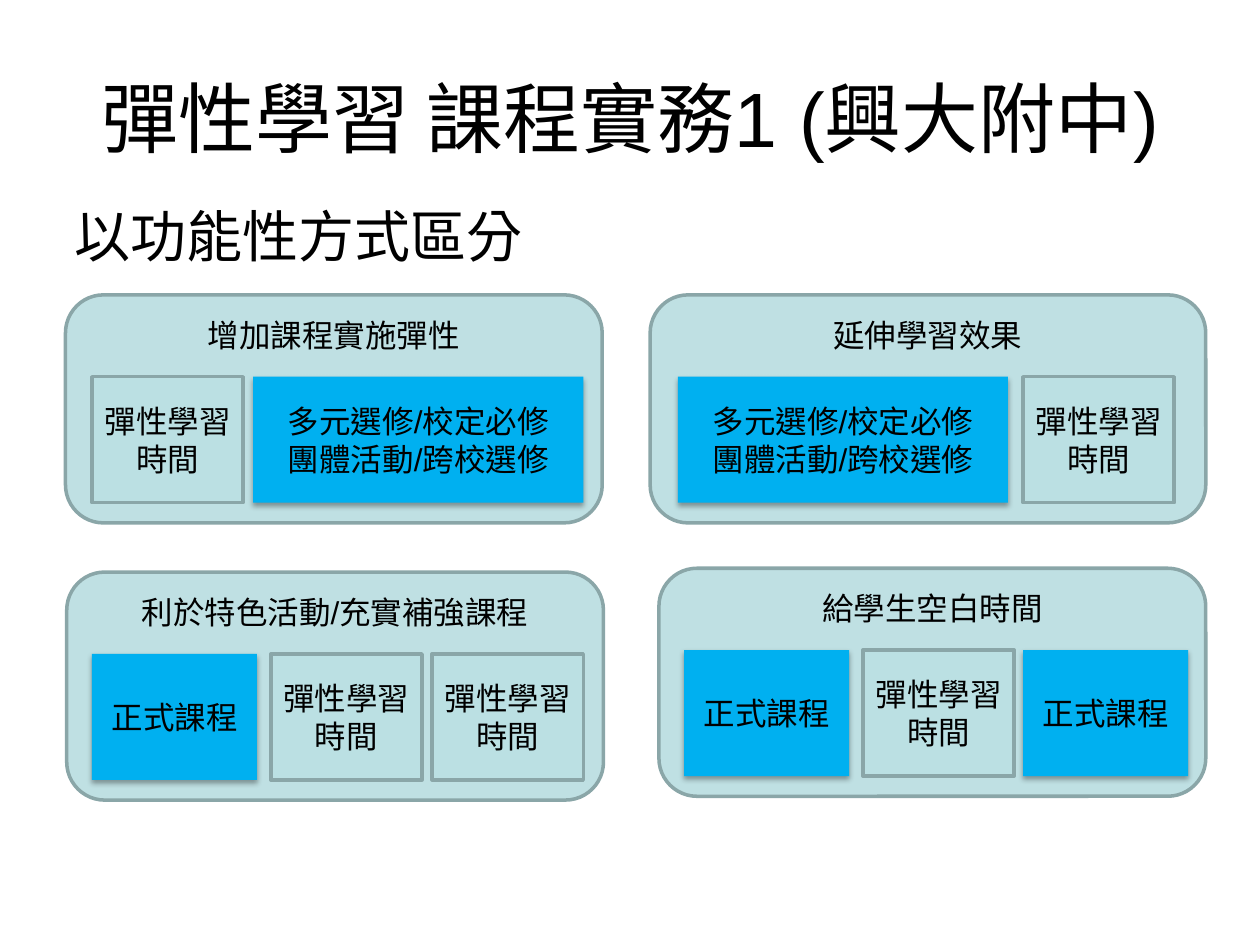
from dataclasses import dataclass

from lxml import etree
from pptx import Presentation
from pptx.dml.color import RGBColor
from pptx.enum import lang, shapes, text
from pptx.oxml import ns
from pptx.util import Inches, Pt

COLORS = {
    "text": "000000",
    "panel": "8AC6CD",
    "flexible": "BBE0E3",
    "course": "00B0F0",
    "border": "8AA6A8",
    "shadow": "000000",
}
FLEXIBLE = "彈性學習\n時間"
ELECTIVES = "多元選修/校定必修\n團體活動/跨校選修"
FORMAL = "正式課程"
PANEL_HEIGHT = 1.81
CARD_OFFSET = 0.65
CARD_HEIGHT = 1


@dataclass
class Card:
    label: str
    left: float
    width: float = 1.2

    @property
    def is_course(self) -> bool:
        return self.label != FLEXIBLE


@dataclass
class Panel:
    heading: str
    left: float
    top: float
    width: float
    cards: list[Card]


PANELS = [
    Panel("增加課程實施彈性", 0.52, 2.34, 4.26,
          [Card(FLEXIBLE, 0.73), Card(ELECTIVES, 2.01, 2.62)]),
    Panel("延伸學習效果", 5.16, 2.34, 4.41,
          [Card(ELECTIVES, 5.38, 2.62), Card(FLEXIBLE, 8.12)]),
    Panel("利於特色活動/充實補強課程", 0.53, 4.54, 4.26,
          [Card(FORMAL, 0.73, 1.31), Card(FLEXIBLE, 2.15), Card(FLEXIBLE, 3.43)]),
    Panel("給學生空白時間", 5.23, 4.51, 4.34,
          [Card(FORMAL, 5.43, 1.31), Card(FLEXIBLE, 6.85), Card(FORMAL, 8.12, 1.31)]),
]


def rgb(name: str) -> RGBColor:
    return RGBColor.from_string(COLORS[name])


def write(shape, content: str, *, size=18, align=text.PP_ALIGN.CENTER,
          anchor=text.MSO_ANCHOR.MIDDLE, side=0.1, top=0.05) -> None:
    """Fill a shape with one paragraph for each line of content."""
    frame = shape.text_frame
    frame.text = content
    frame.word_wrap = True
    frame.auto_size = text.MSO_AUTO_SIZE.NONE
    frame.vertical_anchor = anchor
    frame.margin_left = frame.margin_right = Inches(side)
    frame.margin_top = Inches(top)
    for paragraph in frame.paragraphs:
        paragraph.alignment = align
        for run in paragraph.runs:
            run.font.name = "Arial"
            run.font.size = Pt(size)
            run.font.color.rgb = rgb("text")
            run.font.language_id = lang.MSO_LANGUAGE_ID.TRADITIONAL_CHINESE


def add_box(slide, kind, left: float, top: float, width: float, height: float,
            fill: str, bordered: bool = True):
    box = slide.shapes.add_shape(
        kind, Inches(left), Inches(top), Inches(width), Inches(height))
    box.shadow.inherit = False
    box.fill.solid()
    box.fill.fore_color.rgb = rgb(fill)
    if bordered:
        box.line.color.rgb = rgb("border")
        box.line.width = Pt(2)
    else:
        box.line.fill.background()
    return box


def set_alpha(color, percent: int) -> None:
    etree.SubElement(color, ns.qn("a:alpha"), val=str(percent * 1000))


def add_drop_shadow(shape) -> None:
    effects = shape._element.spPr.find(ns.qn("a:effectLst"))
    shadow = etree.SubElement(
        effects, ns.qn("a:outerShdw"), blurRad=str(Pt(3.1)), dist=str(Pt(1.8)),
        dir=str(90 * 60000), rotWithShape="0")
    color = etree.SubElement(shadow, ns.qn("a:srgbClr"), val=COLORS["shadow"])
    set_alpha(color, 35)


def draw_card(slide, card: Card, top: float) -> None:
    box = add_box(slide, shapes.MSO_SHAPE.RECTANGLE, card.left, top, card.width,
                  CARD_HEIGHT, "course" if card.is_course else "flexible",
                  bordered=not card.is_course)
    if card.is_course:
        add_drop_shadow(box)
    write(box, card.label, side=0.05)


def draw_panel(slide, panel: Panel) -> None:
    box = add_box(slide, shapes.MSO_SHAPE.ROUNDED_RECTANGLE, panel.left, panel.top,
                  panel.width, PANEL_HEIGHT, "panel")
    set_alpha(box._element.spPr.find(ns.qn("a:solidFill"))[0], 54)
    write(box, panel.heading, anchor=text.MSO_ANCHOR.TOP, top=0.08)
    for card in panel.cards:
        draw_card(slide, card, panel.top + CARD_OFFSET)


def main() -> None:
    deck = Presentation()
    deck.slide_width, deck.slide_height = Inches(10), Inches(7.5)
    slide = deck.slides.add_slide(deck.slide_layouts[5])

    title = slide.shapes.title
    title.left, title.top = Inches(0.5), Inches(0.3)
    title.width, title.height = Inches(9), Inches(1.25)
    write(title, "彈性學習 課程實務1 (興大附中)", size=44)

    subtitle = slide.shapes.add_textbox(
        Inches(0.49), Inches(1.55), Inches(9), Inches(0.66))
    write(subtitle, "以功能性方式區分", size=32, align=text.PP_ALIGN.LEFT,
          anchor=text.MSO_ANCHOR.TOP)

    for panel in PANELS:
        draw_panel(slide, panel)

    deck.save("out.pptx")


if __name__ == "__main__":
    main()
